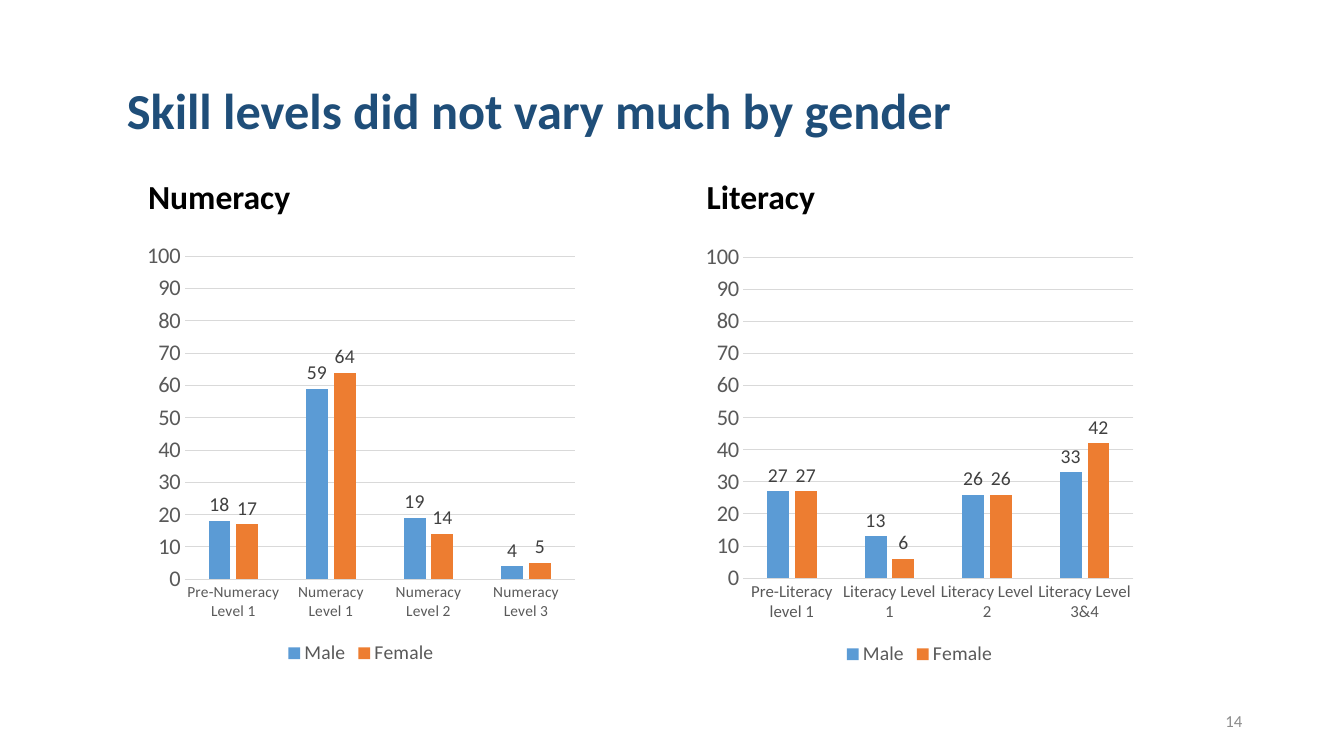
"""Build a slide comparing numeracy and literacy levels by gender."""
from pptx import Presentation
from pptx.chart.data import CategoryChartData
from pptx.dml.color import RGBColor
from pptx.enum.chart import XL_CHART_TYPE as ChartType
from pptx.enum.chart import XL_LABEL_POSITION as LabelPosition
from pptx.enum.chart import XL_LEGEND_POSITION as LegendPosition
from pptx.enum.chart import XL_TICK_MARK as TickMark
from pptx.enum.text import MSO_ANCHOR as Anchor
from pptx.enum.text import PP_ALIGN as Align
from pptx.util import Inches, Pt

COLORS = {
    "title": "1F4E79", "heading": "000000", "number": "8C8C8C",
    "axis": "595959", "label": "404040", "grid": "D9D9D9",
    "Male": "5B9BD5", "Female": "ED7D31",
}


def style_font(font, size, color, bold=False):
    font.name = "Calibri"
    font.size = Pt(size)
    font.bold = bold
    font.color.rgb = RGBColor.from_string(COLORS[color])


def add_text(box, text, size, color, anchor, bold=True, align=Align.LEFT):
    shape = slide.shapes.add_textbox(*map(Inches, box))
    frame = shape.text_frame
    frame.text = text
    frame.word_wrap = True
    frame.vertical_anchor = anchor
    paragraph = frame.paragraphs[0]
    paragraph.alignment = align
    paragraph.line_spacing = 0.9 if bold else 1.0
    style_font(paragraph.runs[0].font, size, color, bold)


presentation = Presentation()
presentation.slide_width = Inches(13.33)
presentation.slide_height = Inches(7.5)
slide = presentation.slides.add_slide(presentation.slide_layouts[6])

add_text((1.16, 0.4, 11.5, 1.45), "Skill levels did not vary much by gender",
         36, "title", Anchor.MIDDLE)
add_text((9.42, 6.95, 3, 0.4), "14", 12, "number", Anchor.MIDDLE,
         bold=False, align=Align.RIGHT)

panels = [
    ("Numeracy", 1.37, 2.32, 11,
     ["Pre-Numeracy Level 1", "Numeracy Level 1", "Numeracy Level 2", "Numeracy Level 3"],
     {"Male": [18, 59, 19, 4], "Female": [17, 64, 14, 5]}),
    ("Literacy", 6.91, 2.33, 12,
     ["Pre-Literacy level 1", "Literacy Level 1", "Literacy Level 2", "Literacy Level 3&4"],
     {"Male": [27, 13, 26, 33], "Female": [27, 6, 26, 42]}),
]

for heading, left, top, category_size, categories, shares in panels:
    add_text((left, 1.5, 4.42, 0.7), heading, 24, "heading", Anchor.BOTTOM)

    chart_data = CategoryChartData(number_format="0")
    chart_data.categories = categories
    for gender, values in shares.items():
        chart_data.add_series(gender, values)
    chart = slide.shapes.add_chart(
        ChartType.COLUMN_CLUSTERED, Inches(left), Inches(top),
        Inches(4.42), Inches(4.32), chart_data).chart
    chart.has_title = False
    style_font(chart.font, 12, "heading")

    chart.has_legend = True
    chart.legend.position = LegendPosition.BOTTOM
    chart.legend.include_in_layout = False
    style_font(chart.legend.font, 14, "axis")

    category_axis, value_axis = chart.category_axis, chart.value_axis
    for axis, size in ((category_axis, category_size), (value_axis, 16)):
        axis.major_tick_mark = TickMark.NONE
        axis.minor_tick_mark = TickMark.NONE
        style_font(axis.tick_labels.font, size, "axis")
    value_axis.minimum_scale = 0
    value_axis.maximum_scale = 100
    value_axis.major_unit = 10
    value_axis.tick_labels.number_format = "0"
    value_axis.tick_labels.number_format_is_linked = False
    value_axis.format.line.fill.background()
    for line in (category_axis.format.line, value_axis.major_gridlines.format.line):
        line.color.rgb = RGBColor.from_string(COLORS["grid"])
        line.width = Pt(0.75)

    plot = chart.plots[0]
    plot.vary_by_categories = False
    plot.gap_width = 219
    plot.overlap = -27
    for series in plot.series:
        series.format.fill.solid()
        series.format.fill.fore_color.rgb = RGBColor.from_string(COLORS[series.name])
        labels = series.data_labels
        labels.show_value = True
        labels.number_format = "0"
        labels.number_format_is_linked = False
        labels.position = LabelPosition.OUTSIDE_END
        style_font(labels.font, 14, "label")

presentation.save("out.pptx")
